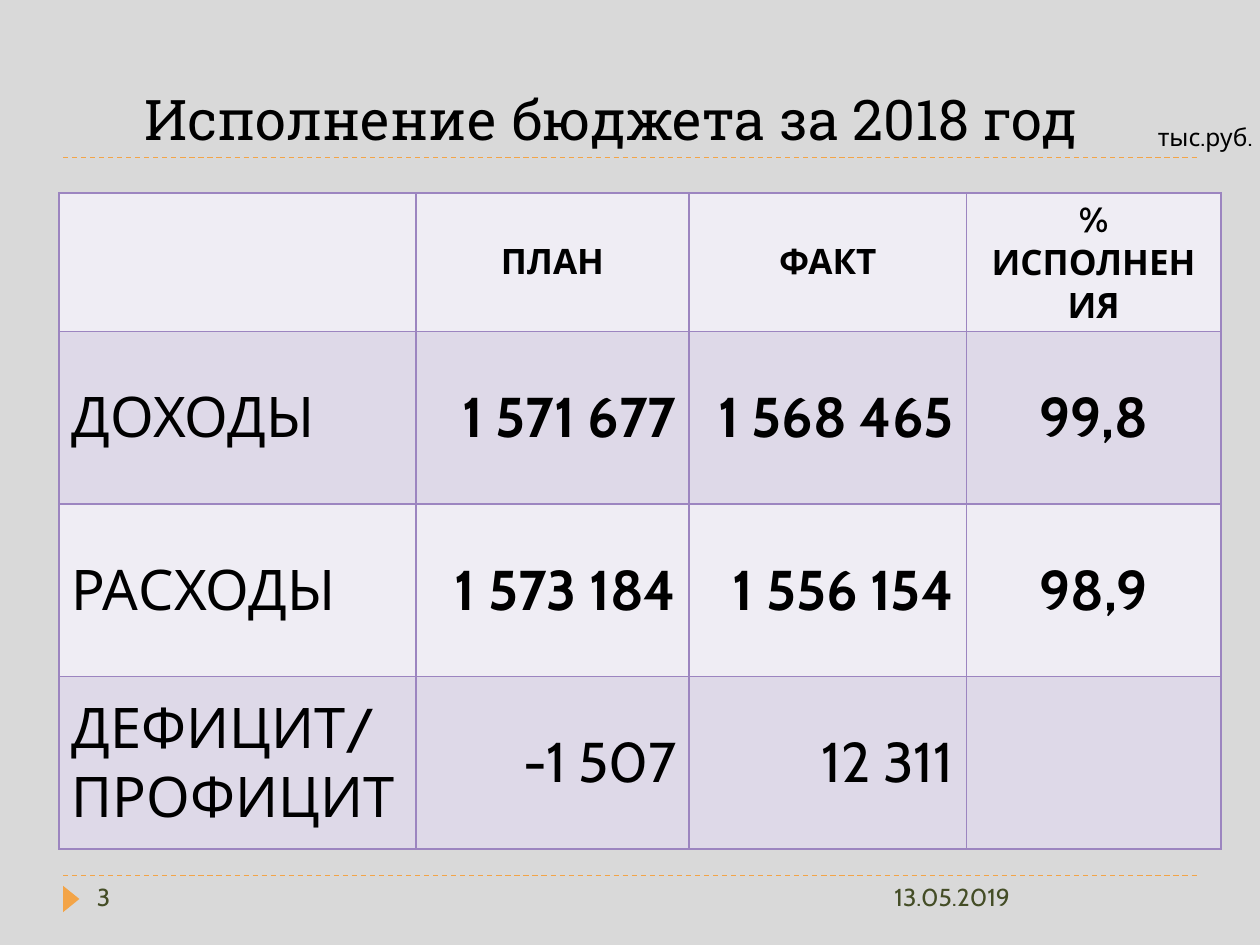
from lxml import etree
from pptx import Presentation
from pptx import util as u
from pptx.dml.color import RGBColor
from pptx.enum import dml, shapes, text
from pptx.oxml import ns

COLORS = {"bg": "D9D9D9", "accent": "F3A447", "black": "000000", "footer": "444D26",
          "border": "9C85C0", "light": "EFEDF4", "dark": "DED9E8"}
LEFT, CENTER, RIGHT = text.PP_ALIGN.LEFT, text.PP_ALIGN.CENTER, text.PP_ALIGN.RIGHT


def write(tf, content, size, color="black", font="Cabin", bold=False, align=LEFT):
    tf.text = content
    for p in tf.paragraphs:
        p.alignment = align
        for r in p.runs:
            r.font.size = u.Pt(size)
            r.font.name = font
            r.font.bold = bold
            r.font.color.rgb = RGBColor.from_string(COLORS[color])


def add_text(box, content, size, anchor=text.MSO_ANCHOR.TOP, **style):
    tf = s.shapes.add_textbox(*(u.Inches(v) for v in box)).text_frame
    tf.word_wrap = True
    tf.vertical_anchor = anchor
    write(tf, content, size, **style)


prs = Presentation()
prs.slide_width, prs.slide_height = u.Inches(10), u.Inches(7.5)
s = prs.slides.add_slide(prs.slide_layouts[6])
s.background.fill.solid()
s.background.fill.fore_color.rgb = RGBColor.from_string(COLORS["bg"])

# Dashed rules above the footer and below the title
for y in (6.95, 1.25):
    line = s.shapes.add_connector(shapes.MSO_CONNECTOR.STRAIGHT, u.Inches(0.5),
                                  u.Inches(y), u.Inches(9.5), u.Inches(y))
    line.line.color.rgb = RGBColor.from_string(COLORS["accent"])
    line.line.width = u.Pt(0.75)
    line.line.dash_style = dml.MSO_LINE.DASH
    etree.SubElement(line._element.spPr, ns.qn("a:effectLst"))

# Footer marker
sp = s.shapes.add_shape(shapes.MSO_SHAPE.ISOSCELES_TRIANGLE, u.Inches(0.46),
                        u.Inches(7.07), u.Inches(0.21), u.Inches(0.13))
sp.rotation = 90
sp.shadow.inherit = False
sp.fill.solid()
sp.fill.fore_color.rgb = RGBColor.from_string(COLORS["accent"])
sp.line.fill.background()

# Title, footer and unit label
add_text((0.2, 0.17, 9.3, 1.08), "Исполнение бюджета за 2018 год", 32,
         anchor=text.MSO_ANCHOR.BOTTOM, font="Roboto Slab", align=CENTER)
add_text((7, 6.95, 2.5, 0.4), "13.05.2019", 14, color="footer")
add_text((0.67, 6.95, 2.17, 0.4), "3", 14, color="footer")
add_text((9.09, 0.92, 1.42, 0.34), "тыс.руб.", 14)

# Budget table
rows = [
    ["", "ПЛАН", "ФАКТ", "% ИСПОЛНЕНИЯ"],
    ["ДОХОДЫ", "1 571 677", "1 568 465", "99,8"],
    ["РАСХОДЫ", "1 573 184", "1 556 154", "98,9"],
    ["ДЕФИЦИТ/\nПРОФИЦИТ", "-1 507", "12 311", ""],
]
col_widths = [2.83, 2.17, 2.2, 2.02]
row_heights = [0.86, 1.37, 1.37, 1.37]
aligns = [LEFT, RIGHT, RIGHT, CENTER]

table = s.shapes.add_table(len(rows), len(col_widths), u.Inches(0.47), u.Inches(1.53),
                           u.Inches(sum(col_widths)), u.Inches(sum(row_heights))).table
for col, width in zip(table.columns, col_widths):
    col.width = u.Inches(width)
for row, height in zip(table.rows, row_heights):
    row.height = u.Inches(height)

for i, values in enumerate(rows):
    for j, value in enumerate(values):
        cell = table.cell(i, j)
        cell.vertical_anchor = text.MSO_ANCHOR.MIDDLE
        header = i == 0
        if value:
            write(cell.text_frame, value, 20 if header else 32,
                  bold=header or (i < 3 and j > 0),
                  align=CENTER if header else aligns[j])
        # Borders come before the fill in the cell properties
        tcPr = cell._tc.get_or_add_tcPr()
        for side in ("lnL", "lnR", "lnT", "lnB"):
            ln = etree.SubElement(tcPr, ns.qn("a:" + side), w=str(u.Pt(1)))
            fill = etree.SubElement(ln, ns.qn("a:solidFill"))
            etree.SubElement(fill, ns.qn("a:srgbClr"), val=COLORS["border"])
        cell.fill.solid()
        cell.fill.fore_color.rgb = RGBColor.from_string(COLORS["dark" if i % 2 else "light"])

prs.save("out.pptx")
